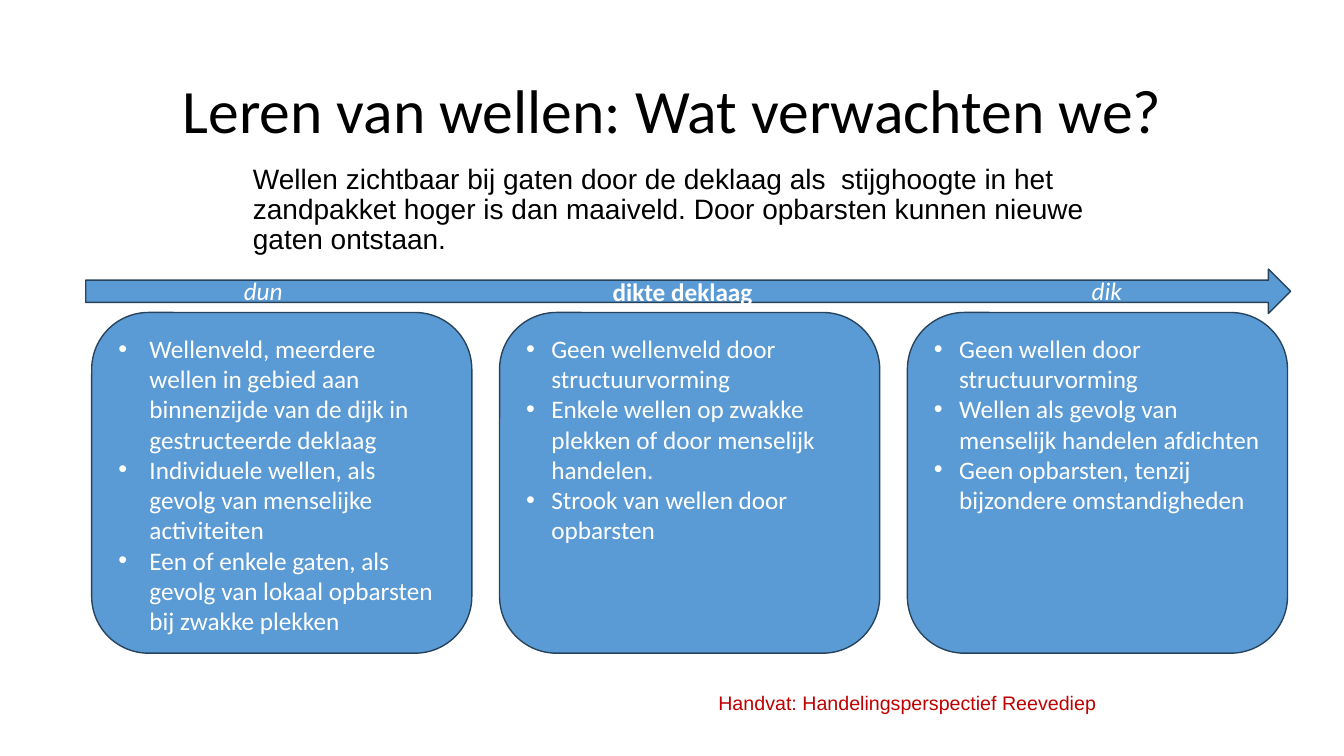
from lxml import etree
from pptx import Presentation
from pptx.dml.color import RGBColor
from pptx.enum.shapes import MSO_SHAPE
from pptx.enum.text import MSO_ANCHOR, PP_ALIGN
from pptx.oxml.ns import qn
from pptx.util import Inches, Pt

ROUND, ARROW = MSO_SHAPE.ROUNDED_RECTANGLE, MSO_SHAPE.RIGHT_ARROW
TOP, MIDDLE = MSO_ANCHOR.TOP, MSO_ANCHOR.MIDDLE
LEFT, CENTER = PP_ALIGN.LEFT, PP_ALIGN.CENTER
BLACK = RGBColor(0x00, 0x00, 0x00)
WHITE = RGBColor(0xFF, 0xFF, 0xFF)
BLUE = RGBColor(0x5B, 0x9B, 0xD5)
NAVY = RGBColor(0x28, 0x44, 0x5D)
RED = RGBColor(0xC0, 0x00, 0x00)

# Card grid
CARD_X, CARD_Y, CARD_W, CARD_H, STEP = 0.91, 3.1, 3.77, 3.38, 4.045
CARDS = [
    (0.31, [
        "Wellenveld, meerdere wellen in gebied aan binnenzijde van de dijk in "
        "gestructeerde deklaag",
        "Individuele wellen, als gevolg van menselijke activiteiten",
        "Een of enkele gaten, als gevolg van lokaal opbarsten bij zwakke plekken",
    ]),
    (0.25, [
        "Geen wellenveld door structuurvorming",
        "Enkele wellen op zwakke plekken of door menselijk handelen.",
        "Strook van wellen door opbarsten",
    ]),
    (0.25, [
        "Geen wellen door structuurvorming",
        "Wellen als gevolg van menselijk handelen afdichten",
        "Geen opbarsten, tenzij bijzondere omstandigheden",
    ]),
]


def write(para, text, size, color, face="Calibri", align=LEFT):
    para.text = text
    para.alignment = align
    para.font.name = face
    para.font.size = Pt(size)
    para.font.color.rgb = color


def block(kind, x, y, w, h):
    """Add a blue preset shape with a thin dark outline."""
    shape = slide.shapes.add_shape(kind, Inches(x), Inches(y), Inches(w), Inches(h))
    shape.shadow.inherit = False
    shape.fill.solid()
    shape.fill.fore_color.rgb = BLUE
    shape.line.color.rgb = NAVY
    shape.line.width = Pt(1)
    return shape


prs = Presentation()
prs.slide_width, prs.slide_height = Inches(13.33), Inches(7.5)
slide = prs.slides.add_slide(prs.slide_layouts[5])

title = slide.shapes.title
title.left, title.top = Inches(0.92), Inches(0.4)
title.width, title.height = Inches(11.5), Inches(1.45)
title.text_frame.vertical_anchor = MIDDLE
head = title.text_frame.paragraphs[0]
write(head, "Leren van wellen: Wat verwachten we?", 44, BLACK, align=CENTER)
head.line_spacing = 0.9

# Cards with bullets
for col, (indent, items) in enumerate(CARDS):
    frame = block(ROUND, CARD_X + col * STEP, CARD_Y, CARD_W, CARD_H).text_frame
    frame.vertical_anchor = TOP
    frame.margin_top = Inches(0.04)
    for row, item in enumerate(items):
        para = frame.add_paragraph() if row else frame.paragraphs[0]
        props = para._p.get_or_add_pPr()
        props.set("marL", str(Inches(indent)))
        props.set("indent", str(-Inches(indent)))
        etree.SubElement(props, qn("a:buFont")).set("typeface", "Arial")
        etree.SubElement(props, qn("a:buChar")).set("char", "•")
        write(para, item, 18, WHITE)

# Thickness arrow
frame = block(ARROW, 0.85, 2.67, 11.95, 0.44).text_frame
frame.vertical_anchor = MIDDLE
label = frame.paragraphs[0]
write(label, "dikte deklaag", 18, WHITE, align=CENTER)
label.font.bold = True

# Intro, source line and arrow ends
NOTES = [
    (2.41, 1.59, 8.66, 1.09, "Wellen zichtbaar bij gaten door de deklaag als  stijghoogte in het "
     "zandpakket hoger is dan maaiveld. Door opbarsten kunnen nieuwe gaten ontstaan.",
     20, BLACK, "Arial", LEFT),
    (6.4, 6.83, 5.2, 0.55, "Handvat: Handelingsperspectief Reevediep", 14, RED, "Arial", CENTER),
    (2.32, 2.68, 0.66, 0.4, "dun", 18, WHITE, "Calibri", LEFT),
    (10.73, 2.68, 0.66, 0.4, "dik", 18, WHITE, "Calibri", LEFT),
]
for x, y, w, h, text, size, color, face, align in NOTES:
    box = slide.shapes.add_textbox(Inches(x), Inches(y), Inches(w), Inches(h))
    box.text_frame.word_wrap = True
    para = box.text_frame.paragraphs[0]
    write(para, text, size, color, face, align)
    if face == "Arial":
        para.line_spacing = 0.9
    else:
        para.font.italic = True

prs.save("out.pptx")
